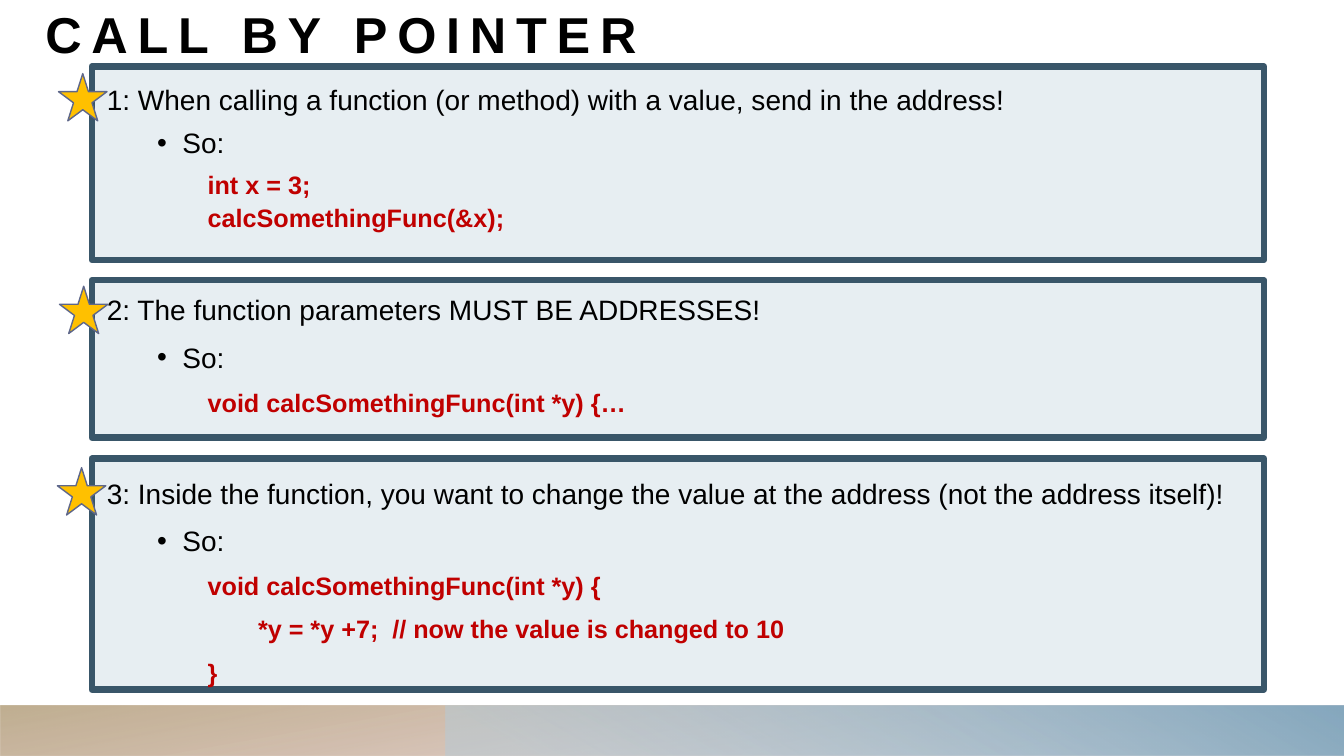
from lxml import etree
from pptx import Presentation
from pptx.dml.color import RGBColor
from pptx.enum import shapes, text
from pptx.oxml import ns
from pptx.util import Pt

SLIDE_W, SLIDE_H = 960, 540
PANEL_LEFT, PANEL_W = 65.5, 837.4
STEP_SIZE, CODE_SIZE = 20, 18

# top, height, text offset, star offset (x, y), line spacing, step, code lines, gap between code lines
STEPS = [
    (47.5, 138.2, 8.7, (-23.7, 5.1), 1.1,
     "1: When calling a function (or method) with a value, send in the address!",
     ["int x = 3;", "calcSomethingFunc(&x);"], 0),
    (200.2, 112.3, 4.3, (-23, 4.3), 1.2,
     "2: The function parameters MUST BE ADDRESSES!",
     ["void calcSomethingFunc(int *y) {…"], 5),
    (327.6, 164.9, 7.9, (-24.5, 6.5), 1.2,
     "3: Inside the function, you want to change the value at the address (not the address itself)!",
     ["void calcSomethingFunc(int *y) {",
      "\t*y = *y +7;  // now the value is changed to 10", "}"], 5),
]


def rgb(value):
    return RGBColor.from_string(value)


def add_child(parent, tag, **attributes):
    return etree.SubElement(parent, ns.qn(tag), attributes)


def add_plain_shape(slide, kind, left, top, width, height):
    shape = slide.shapes.add_shape(kind, Pt(left), Pt(top), Pt(width), Pt(height))
    shape.shadow.inherit = False
    return shape


def add_outlined(slide, kind, box, fill, line, weight):
    shape = add_plain_shape(slide, kind, *box)
    shape.fill.solid()
    shape.fill.fore_color.rgb = rgb(fill)
    shape.line.color.rgb = rgb(line)
    shape.line.width = Pt(weight)
    return shape


def add_text_frame(slide, left, top, width, height):
    frame = slide.shapes.add_textbox(Pt(left), Pt(top), Pt(width), Pt(height)).text_frame
    frame.word_wrap = True
    frame.margin_left = frame.margin_top = frame.margin_right = frame.margin_bottom = 0
    return frame


def style(paragraph, size, color, bold):
    for run in paragraph.runs:
        run.font.name = "Arial"
        run.font.size = Pt(size)
        run.font.bold = bold
        run.font.color.rgb = rgb(color)


def add_band(slide, left, width, stops, angle, rotation):
    """Footer band; each stop is (position in %, colour, opacity in %)."""
    height = 36
    band = add_plain_shape(slide, shapes.MSO_SHAPE.RECTANGLE,
                           left, SLIDE_H - height, width, height)
    band.line.fill.background()
    band.rotation = rotation
    properties = band.element.spPr
    properties.find(ns.qn("a:xfrm")).set("flipH", "1")
    band.fill.gradient()
    for stop, (position, color, opacity) in zip(band.fill.gradient_stops, stops):
        stop.position = position / 100
        stop.color.rgb = rgb(color)
    gradient = properties.find(ns.qn("a:gradFill"))
    for color, (_, _, opacity) in zip(gradient.iter(ns.qn("a:srgbClr")), stops):
        add_child(color, "a:alpha", val=str(opacity * 1000))
    gradient.find(ns.qn("a:lin")).set("ang", str(angle * 60000))


def add_title(slide, left, top, width, height):
    frame = add_text_frame(slide, left, top, width, height)
    frame.vertical_anchor = text.MSO_ANCHOR.BOTTOM
    frame.text = "CALL BY POINTER"
    heading = frame.paragraphs[0]
    style(heading, 36, "000000", True)
    heading.runs[0].font._element.set("spc", "700")


def add_step(slide, top, height, text_offset, spacing, step, code, code_gap):
    panel = add_outlined(slide, shapes.MSO_SHAPE.RECTANGLE,
                         (PANEL_LEFT, top, PANEL_W, height), "E7EEF2", "395669", 4.5)
    add_child(panel.element.spPr.find(ns.qn("a:ln")), "a:round")

    frame = add_text_frame(slide, PANEL_LEFT + 10.8, top + text_offset, 816, height - text_offset)
    lines = [(step, 0, 10), ("So:", 1, 5)]
    lines += [(line, 2, code_gap if index else 5) for index, line in enumerate(code)]
    for index, (wording, level, before) in enumerate(lines):
        paragraph = frame.add_paragraph() if index else frame.paragraphs[0]
        paragraph.text = wording
        paragraph.level = level
        paragraph.line_spacing = spacing
        paragraph.space_before = Pt(before)
        properties = paragraph._p.get_or_add_pPr()
        if level == 1:
            properties.set("marL", str(Pt(54)))
            properties.set("indent", str(Pt(-18)))
            add_child(properties, "a:buFont", typeface="Arial")
            add_child(properties, "a:buChar", char="•")
        elif level == 2:
            properties.set("marL", str(Pt(72)))
            properties.set("indent", "0")
        if level == 2:
            style(paragraph, CODE_SIZE, "C00000", True)
        else:
            style(paragraph, STEP_SIZE, "000000", False)


def add_star(slide, left, top):
    add_outlined(slide, shapes.MSO_SHAPE.STAR_5_POINT,
                 (left, top, 34.6, 33.8), "FFC000", "5E678A", 1)


def main():
    deck = Presentation()
    deck.slide_width, deck.slide_height = Pt(SLIDE_W), Pt(SLIDE_H)
    slide = deck.slides.add_slide(deck.slide_layouts[6])

    add_band(slide, 0, SLIDE_W, [(14, "BA8B7F", 28), (100, "B5A17E", 85)], 100, 180)
    add_band(slide, 318, SLIDE_W - 318, [(9, "B6CBD8", 55), (99, "86A8BE", 100)], 240, 0)
    add_title(slide, 32.4, -5.8, 700.6, 51.1)
    for top, height, text_offset, _, spacing, step, code, code_gap in STEPS:
        add_step(slide, top, height, text_offset, spacing, step, code, code_gap)
    for top, _, _, (star_x, star_y), *_ in STEPS:
        add_star(slide, PANEL_LEFT + star_x, top + star_y)

    deck.save("out.pptx")


if __name__ == "__main__":
    main()
